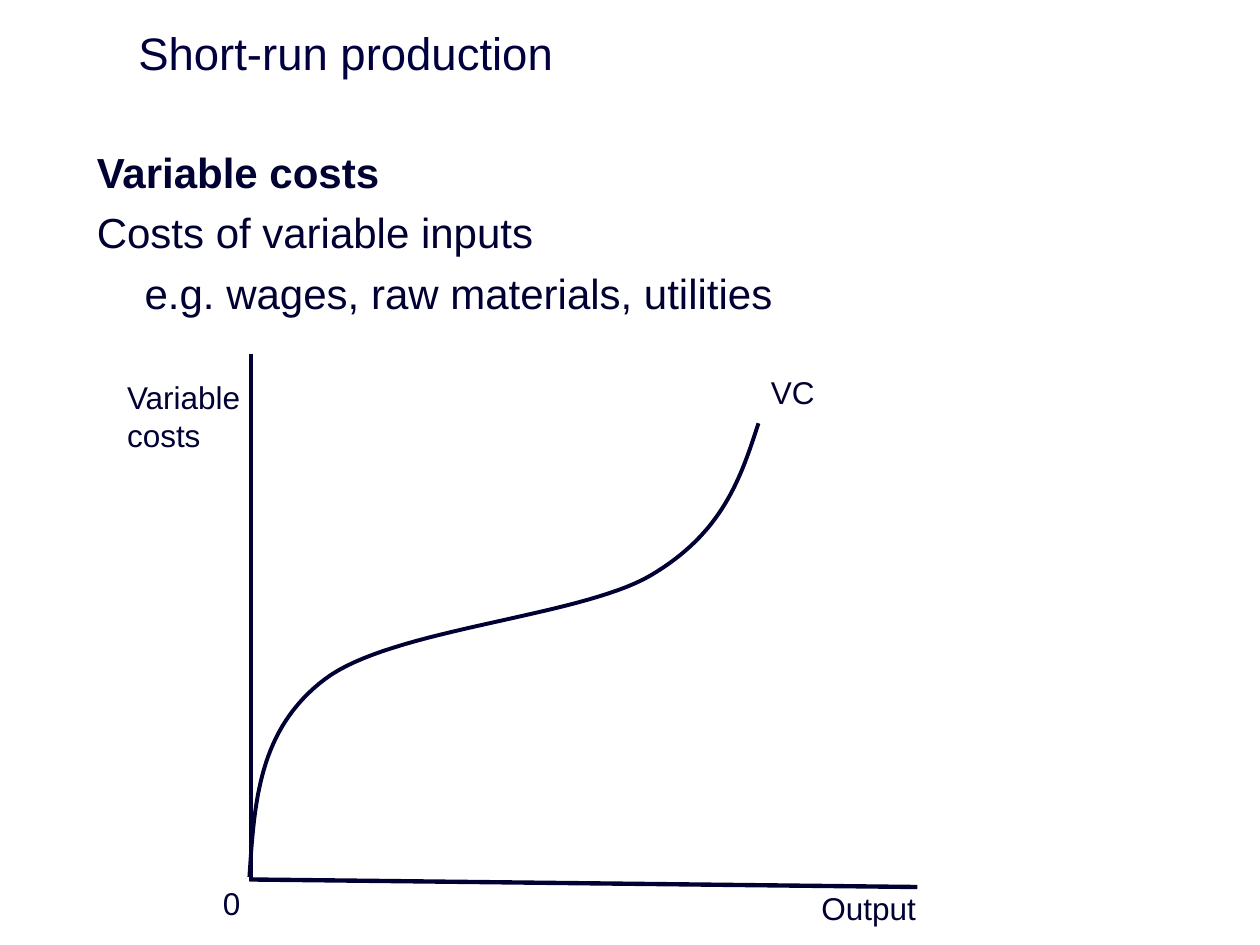
from dataclasses import dataclass

from lxml import etree
from pptx import Presentation
from pptx import util as u
from pptx.dml.color import RGBColor
from pptx.enum import shapes, text
from pptx.oxml.ns import qn

COLS, ROWS = 100, 75
CELL = u.Inches(0.1)
CURVE_STEPS = 32

Point = tuple[float, float]


@dataclass(frozen=True)
class Theme:
    font: str = "Arial"
    title_ink: RGBColor = RGBColor(0x00, 0x00, 0x3E)
    ink: RGBColor = RGBColor(0x00, 0x00, 0x32)
    title_size: float = 26
    body_size: float = 24
    label_size: float = 18
    axis_width: float = 2.5
    curve_width: float = 2.25
    paragraph_gap: float = 6


@dataclass(frozen=True)
class Line:
    text: str
    bold: bool = False
    indent: float = 0


@dataclass(frozen=True)
class Box:
    col: float
    row: float
    cols: float
    rows: float
    lines: tuple[Line, ...]
    size: float
    ink: RGBColor
    anchor: text.MSO_ANCHOR = text.MSO_ANCHOR.TOP


@dataclass(frozen=True)
class Axis:
    start: Point
    end: Point


@dataclass(frozen=True)
class Bezier:
    start: Point
    control_a: Point
    control_b: Point
    end: Point

    def at(self, t: float) -> Point:
        weights = ((1 - t) ** 3, 3 * t * (1 - t) ** 2, 3 * t**2 * (1 - t), t**3)
        points = (self.start, self.control_a, self.control_b, self.end)
        x, y = (sum(w * pt[i] for w, pt in zip(weights, points)) for i in (0, 1))
        return x, y


THEME = Theme()


def label(col: float, row: float, cols: float, rows: float, words: str) -> Box:
    return Box(col, row, cols, rows, (Line(words),), THEME.label_size, THEME.ink)


BOXES = (
    Box(10, 1.6, 90, 5.1, (Line("Short-run production"),),
        THEME.title_size, THEME.title_ink, text.MSO_ANCHOR.MIDDLE),
    Box(6.7, 11.1, 88.3, 49.1,
        (Line("Variable costs", bold=True),
         Line("Costs of variable inputs"),
         Line("e.g. wages, raw materials, utilities", indent=3.8)),
        THEME.body_size, THEME.ink),
    label(64.2, 70.1, 12.5, 4, "Output"),
    label(16.7, 69.7, 6.4, 4, "0"),
    label(9.1, 29.5, 11.2, 7.1, "Variable costs"),
    label(60.2, 29.1, 11.2, 4, "VC"),
)

AXES = (
    Axis((19.9, 28.1), (19.9, 69.9)),
    Axis((72.8, 70.4), (19.8, 69.8)),
)

VARIABLE_COST = (
    Bezier((19.8, 69.6), (20.2, 63.7), (20.5, 57.9), (25.8, 53.9)),
    Bezier((25.8, 53.9), (31.1, 49.9), (45.9, 49), (51.6, 45.7)),
    Bezier((51.6, 45.7), (57.4, 42.3), (58.8, 37.9), (60.2, 33.6)),
)


def grid(cells: float) -> u.Emu:
    return u.Emu(round(cells * CELL))


def draw_box(slide, box: Box) -> None:
    s = slide.shapes.add_textbox(*map(grid, (box.col, box.row, box.cols, box.rows)))
    tf = s.text_frame
    tf.word_wrap = True
    tf.vertical_anchor = box.anchor
    for i, line in enumerate(box.lines):
        p = tf.add_paragraph() if i else tf.paragraphs[0]
        p.text = line.text
        if i:
            p.space_before = u.Pt(THEME.paragraph_gap)
        if line.indent:
            p._p.get_or_add_pPr().set("marL", str(grid(line.indent)))
        for r in p.runs:
            r.font.name = THEME.font
            r.font.size = u.Pt(box.size)
            r.font.bold = line.bold
            r.font.color.rgb = box.ink


def draw_axis(slide, axis: Axis) -> None:
    s = slide.shapes.add_connector(
        shapes.MSO_CONNECTOR.STRAIGHT, *map(grid, axis.start + axis.end))
    s.line.color.rgb = THEME.ink
    s.line.width = u.Pt(THEME.axis_width)
    etree.SubElement(s._element.spPr, qn("a:effectLst"))


def draw_curve(slide, pieces: tuple[Bezier, ...]) -> None:
    points = [tuple(map(grid, piece.at(i / CURVE_STEPS)))
              for piece in pieces for i in range(1, CURVE_STEPS + 1)]
    builder = slide.shapes.build_freeform(*map(grid, pieces[0].start))
    builder.add_line_segments(points, close=False)
    s = builder.convert_to_shape()
    s.shadow.inherit = False
    s.fill.background()
    s.line.color.rgb = THEME.ink
    s.line.width = u.Pt(THEME.curve_width)


def main() -> None:
    prs = Presentation()
    prs.slide_width, prs.slide_height = grid(COLS), grid(ROWS)
    slide = prs.slides.add_slide(prs.slide_layouts[6])
    for box in BOXES:
        draw_box(slide, box)
    for axis in AXES:
        draw_axis(slide, axis)
    draw_curve(slide, VARIABLE_COST)
    prs.save("out.pptx")


if __name__ == "__main__":
    main()
